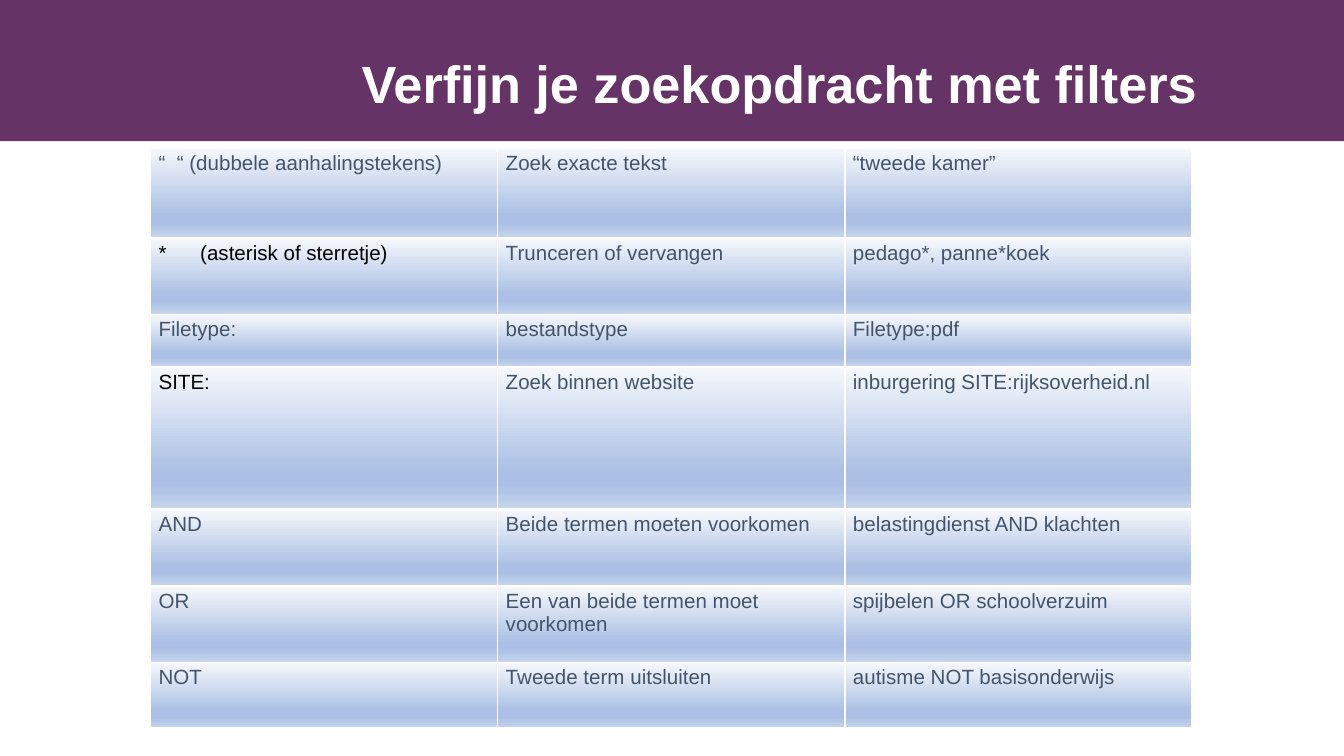
from dataclasses import dataclass

from lxml import etree
from pptx import Presentation
from pptx.dml.color import RGBColor
from pptx.enum.shapes import MSO_SHAPE
from pptx.enum.text import MSO_ANCHOR, PP_ALIGN
from pptx.oxml.ns import qn
from pptx.util import Inches, Pt

RECTANGLE = MSO_SHAPE.RECTANGLE
TOP, MIDDLE = MSO_ANCHOR.TOP, MSO_ANCHOR.MIDDLE
LEFT = PP_ALIGN.LEFT
TITLE_ONLY = 5


@dataclass(frozen=True)
class Theme:
    font: str = "Arial"
    title_size: int = 28
    cell_size: int = 11
    purple: str = "663366"
    white: str = "FFFFFF"
    slate: str = "44546A"
    black: str = "000000"
    gradient: tuple = ((0, "F6F8FC"), (74, "ABC0E4"), (83, "ABC0E4"), (100, "C7D5ED"))


THEME = Theme()
SLIDE_WIDTH = 10
SLIDE_HEIGHT = SLIDE_WIDTH * 9 / 16
TABLE_WIDTH = 7.75
ROW_HEIGHTS = (0.67, 0.57, 0.39, 1.06, 0.57, 0.57, 0.49)
OPERATOR_TAB = 0.31
BLACK_OPERATORS = (1, 3)
SEARCH_FILTERS = (
    ("“  “ (dubbele aanhalingstekens)", "Zoek exacte tekst", "“tweede kamer”"),
    ("*\t(asterisk of sterretje)", "Trunceren of vervangen", "pedago*, panne*koek"),
    ("Filetype:", "bestandstype", "Filetype:pdf"),
    ("SITE:", "Zoek binnen website", "inburgering SITE:rijksoverheid.nl"),
    ("AND", "Beide termen moeten voorkomen", "belastingdienst AND klachten"),
    ("OR", "Een van beide termen moet voorkomen", "spijbelen OR schoolverzuim"),
    ("NOT", "Tweede term uitsluiten", "autisme NOT basisonderwijs"),
)


def set_attributes(target, values):
    for name, value in values.items():
        setattr(target, name, value)


def format_font(font, size, color, bold=False):
    set_attributes(font, {"name": THEME.font, "size": Pt(size), "bold": bold})
    font.color.rgb = RGBColor.from_string(color)


def add_element(parent, tag, **attributes):
    element = etree.SubElement(parent, qn(tag))
    for name, value in attributes.items():
        element.set(name, str(value))
    return element


def add_header_band(slide):
    band = slide.shapes.add_shape(RECTANGLE, 0, 0, Inches(SLIDE_WIDTH), Inches(1.05))
    band.shadow.inherit = False
    band.fill.solid()
    band.fill.fore_color.rgb = RGBColor.from_string(THEME.purple)
    band.line.fill.background()
    slide.shapes.element.insert(2, band.element)


def format_title(slide, text):
    title = slide.shapes.title
    set_attributes(title, {
        "left": Inches(2.59), "top": Inches(0.33),
        "width": Inches(6.53), "height": Inches(0.57),
    })
    frame = title.text_frame
    frame.text = text
    set_attributes(frame, {
        "word_wrap": True, "vertical_anchor": MIDDLE,
        "margin_left": Inches(0.1), "margin_right": Inches(0.1),
        "margin_top": Inches(0.05), "margin_bottom": Inches(0.05),
    })
    paragraph = frame.paragraphs[0]
    set_attributes(paragraph, {"alignment": LEFT, "line_spacing": 1.0})
    format_font(paragraph.runs[0].font, THEME.title_size, THEME.white, bold=True)


def style_cell(cell):
    set_attributes(cell, {
        "margin_left": Inches(0.06), "margin_right": Inches(0.06),
        "margin_top": Inches(0.03), "margin_bottom": Inches(0.03),
        "vertical_anchor": TOP,
    })
    properties = cell._tc.get_or_add_tcPr()
    for side in ("a:lnL", "a:lnR", "a:lnT", "a:lnB"):
        border = add_element(properties, side, w=Pt(1))
        border_fill = add_element(border, "a:solidFill")
        add_element(border_fill, "a:srgbClr", val=THEME.white)
    gradient = add_element(properties, "a:gradFill", rotWithShape=1)
    stops = add_element(gradient, "a:gsLst")
    for position, color in THEME.gradient:
        stop = add_element(stops, "a:gs", pos=position * 1000)
        add_element(stop, "a:srgbClr", val=color)
    add_element(gradient, "a:lin", ang=90 * 60000, scaled=0)


def write_cell(cell, text, color):
    paragraph = cell.text_frame.paragraphs[0]
    run = paragraph.add_run()
    run.text = text
    if "\t" in text:
        tabs = add_element(paragraph._p.get_or_add_pPr(), "a:tabLst")
        add_element(tabs, "a:tab", pos=Inches(OPERATOR_TAB), algn="l")
    format_font(run.font, THEME.cell_size, color)


def add_filter_table(slide):
    column_count = len(SEARCH_FILTERS[0])
    table = slide.shapes.add_table(
        len(SEARCH_FILTERS), column_count, Inches(1.12), Inches(1.1),
        Inches(TABLE_WIDTH), Inches(sum(ROW_HEIGHTS)),
    ).table
    set_attributes(table, {"first_row": False, "horz_banding": False})
    for column in table.columns:
        column.width = Inches(TABLE_WIDTH / column_count)
    for row, height in zip(table.rows, ROW_HEIGHTS):
        row.height = Inches(height)
    for row_index, texts in enumerate(SEARCH_FILTERS):
        for column_index, text in enumerate(texts):
            is_black = column_index == 0 and row_index in BLACK_OPERATORS
            cell = table.cell(row_index, column_index)
            style_cell(cell)
            write_cell(cell, text, THEME.black if is_black else THEME.slate)


def main():
    presentation = Presentation()
    set_attributes(presentation, {
        "slide_width": Inches(SLIDE_WIDTH), "slide_height": Inches(SLIDE_HEIGHT),
    })
    slide = presentation.slides.add_slide(presentation.slide_layouts[TITLE_ONLY])
    add_header_band(slide)
    format_title(slide, "Verfijn je zoekopdracht met filters")
    add_filter_table(slide)
    presentation.save("out.pptx")


if __name__ == "__main__":
    main()
